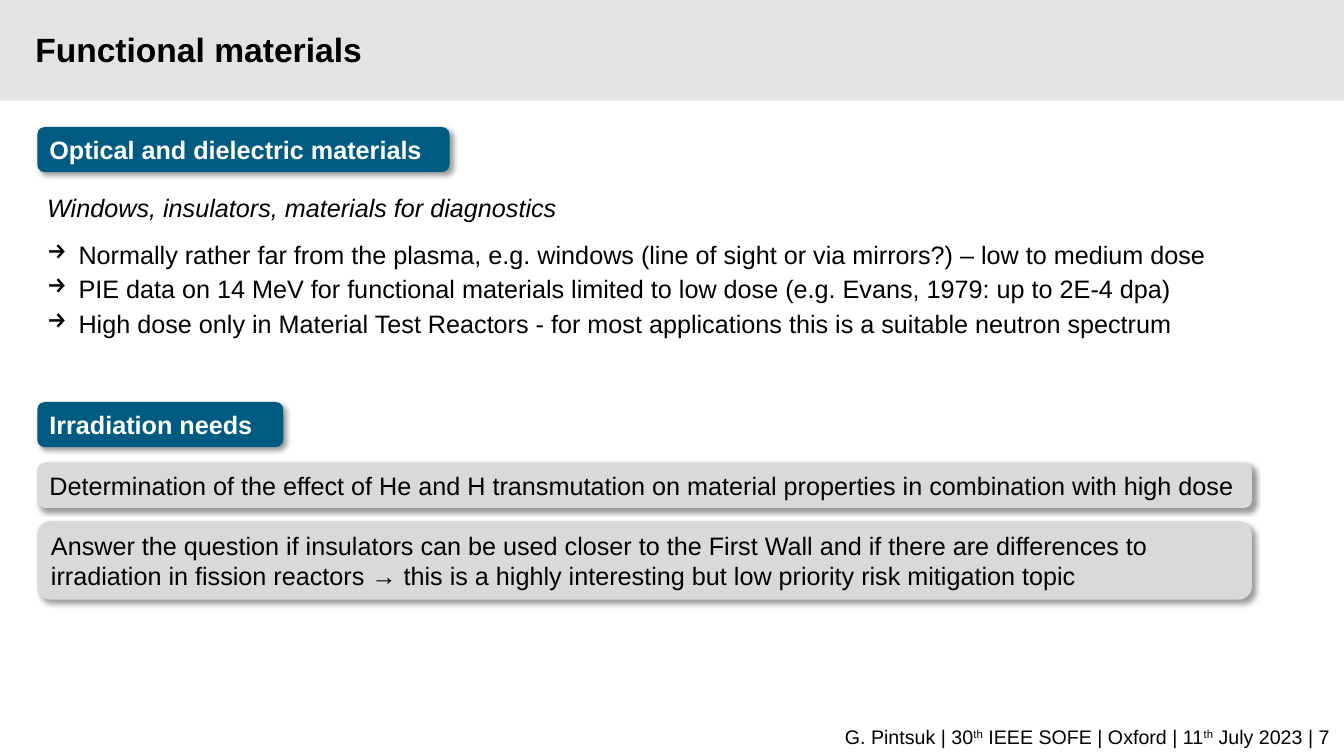
from lxml.etree import SubElement
from pptx import Presentation
from pptx.dml.color import RGBColor
from pptx.enum.shapes import MSO_SHAPE
from pptx.enum.text import MSO_ANCHOR, PP_ALIGN
from pptx.oxml.ns import qn
from pptx.util import Cm, Pt

BLUE, LIGHT_GREY, BAND_GREY = "005B82", "D9D9D9", "E3E3E3"
BLACK, WHITE = "000000", "FFFFFF"
LEFT, FULL_WIDTH = 0.94, 30.61
LABEL_HEIGHT = 1.14

INTRO = "Windows, insulators, materials for diagnostics"
FINDINGS = [
    "Normally rather far from the plasma, e.g. windows (line of sight or via mirrors?) – low to medium dose",
    "PIE data on 14 MeV for functional materials limited to low dose (e.g. Evans, 1979: up to 2E-4 dpa)",
    "High dose only in Material Test Reactors - for most applications this is a suitable neutron spectrum",
]
TRANSMUTATION = ("Determination of the effect of He and H transmutation on material properties "
                 "in combination with high dose")
INSULATORS = ("Answer the question if insulators can be used closer to the First Wall and if there are "
              "differences to irradiation in fission reactors → this is a highly interesting but "
              "low priority risk mitigation topic")
FOOTER = [("G. Pintsuk | 30", False), ("th", True), (" IEEE SOFE | Oxford | 11", False),
          ("th", True), (" July 2023 | 7", False)]


def colour(hex_code):
    return RGBColor.from_string(hex_code)


def style(para, size=18, hex_code=BLACK, bold=False, italic=False):
    font = para.font
    font.name, font.size = "Arial", Pt(size)
    font.bold, font.italic = bold, italic
    font.color.rgb = colour(hex_code)


def add_shape(page, kind, left, top, width, height, fill):
    shape = page.shapes.add_shape(kind, Cm(left), Cm(top), Cm(width), Cm(height))
    shape.shadow.inherit = False
    shape.fill.solid()
    shape.fill.fore_color.rgb = colour(fill)
    shape.line.fill.background()
    return shape


def add_shadow(shape):
    effects = shape._element.spPr.find(qn("a:effectLst"))
    shadow = SubElement(effects, qn("a:outerShdw"), blurRad=str(Pt(4)), dist=str(Pt(3)),
                        dir="2700000", algn="tl", rotWithShape="0")
    shade = SubElement(shadow, qn("a:srgbClr"), val=BLACK)
    SubElement(shade, qn("a:alpha"), val="40000")


def add_panel(page, text, top, width, height, fill, hex_code=BLACK, bold=False):
    panel = add_shape(page, MSO_SHAPE.ROUNDED_RECTANGLE, LEFT, top, width, height, fill)
    add_shadow(panel)
    frame = panel.text_frame
    frame.word_wrap = True
    frame.vertical_anchor = MSO_ANCHOR.MIDDLE
    para = frame.paragraphs[0]
    para.text = text
    para.alignment = PP_ALIGN.LEFT
    style(para, hex_code=hex_code, bold=bold)


def add_heading(page, text, top, width):
    add_panel(page, text, top, width, LABEL_HEIGHT, BLUE, WHITE, bold=True)


def add_text_frame(page, left, top, width, height, anchor=MSO_ANCHOR.MIDDLE):
    box = page.shapes.add_textbox(Cm(left), Cm(top), Cm(width), Cm(height))
    frame = box.text_frame
    frame.word_wrap = True
    frame.vertical_anchor = anchor
    return frame


def add_arrow_bullet(para):
    properties = para._p.get_or_add_pPr()
    indent = Cm(0.79)
    properties.set("marL", str(indent))
    properties.set("indent", str(-indent))
    SubElement(properties, qn("a:buChar"), char="→")


def add_title(page, text):
    para = add_text_frame(page, 0.64, 0.56, 28.5, 1.37).paragraphs[0]
    para.text = text
    style(para, size=24, bold=True)


def add_findings(page):
    frame = add_text_frame(page, LEFT, 4.72, FULL_WIDTH, 3.99, MSO_ANCHOR.TOP)
    intro = frame.paragraphs[0]
    intro.text = INTRO
    intro.space_after = Pt(12)
    style(intro, italic=True)
    for finding in FINDINGS:
        para = frame.add_paragraph()
        para.text = finding
        add_arrow_bullet(para)
        para.space_after = Pt(3)
        style(para)


def add_footer(page):
    frame = add_text_frame(page, 3.23, 18.19, 30.53, 0.74)
    frame.margin_top = frame.margin_bottom = 0
    para = frame.paragraphs[0]
    para.alignment = PP_ALIGN.RIGHT
    style(para, size=14)
    for text, raised in FOOTER:
        span = para.add_run()
        span.text = text
        if raised:
            span._r.get_or_add_rPr().set("baseline", "30000")


def main():
    deck = Presentation()
    deck.slide_width, deck.slide_height = Cm(33.87), Cm(19.05)
    page = deck.slides.add_slide(deck.slide_layouts[6])

    # Title band and footer
    add_shape(page, MSO_SHAPE.RECTANGLE, 0, 0, 33.87, 2.54, BAND_GREY)
    add_footer(page)
    add_title(page, "Functional materials")

    # Materials
    add_heading(page, "Optical and dielectric materials", 3.2, 10.39)
    add_findings(page)

    # Irradiation needs
    add_heading(page, "Irradiation needs", 10.13, 6.2)
    add_panel(page, TRANSMUTATION, 11.66, FULL_WIDTH, LABEL_HEIGHT, LIGHT_GREY)
    add_panel(page, INSULATORS, 13.13, FULL_WIDTH, 1.98, LIGHT_GREY)

    deck.save("out.pptx")


if __name__ == "__main__":
    main()
